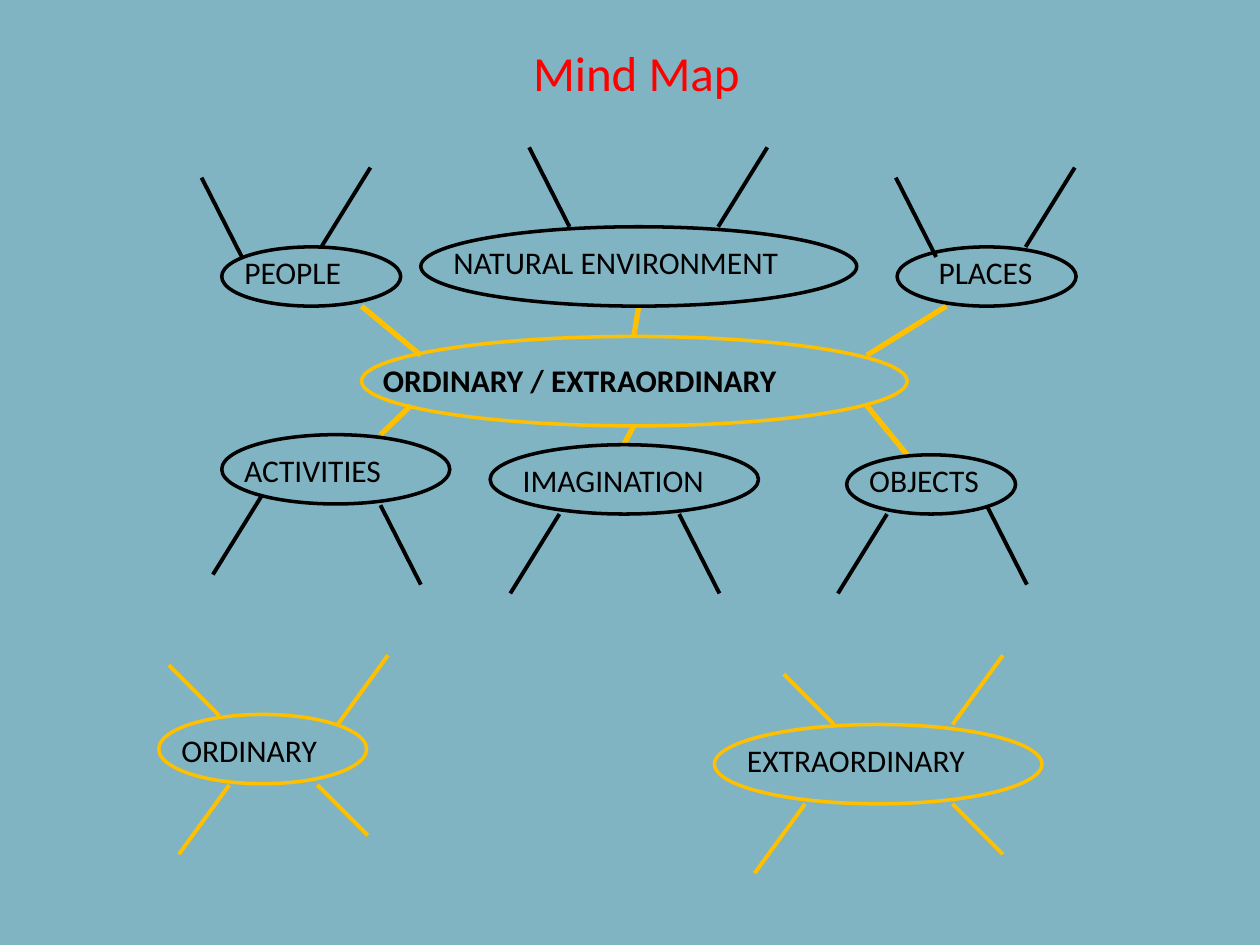
from lxml.etree import SubElement
from pptx import Presentation
from pptx.dml.color import RGBColor
from pptx.enum.shapes import MSO_CONNECTOR as Connector, MSO_SHAPE as Shape
from pptx.enum.text import MSO_ANCHOR as Anchor, MSO_AUTO_SIZE as AutoSize, PP_ALIGN as Align
from pptx.oxml.ns import qn
from pptx.util import Inches, Pt

BLACK, GOLD, RED, TEAL = "000000", "FFC000", "FF0000", "81B4C2"
UP_LEFT, UP_RIGHT = (-0.32, -0.63), (0.39, -0.63)
DOWN_LEFT, DOWN_RIGHT = (-0.39, 0.63), (0.32, 0.63)
GOLD_UP_LEFT, GOLD_UP_RIGHT = (-0.4, -0.4), (0.4, -0.55)
GOLD_DOWN_LEFT, GOLD_DOWN_RIGHT = (-0.4, 0.55), (0.4, 0.4)

# Topic: text, ellipse box, label (x, y, width), spokes (x, y, reach), all inside the box
HUB = ("ORDINARY / EXTRAORDINARY", (2.87, 2.67, 4.33, 0.71), (0.07, 0.15, 3.36), [
    (0.47, 0.15, (-0.47, -0.39)), (2.16, 0, (0.04, -0.24)), (4.01, 0.15, (0.63, -0.39)),
    (4.01, 0.55, (0.32, 0.39)), (2.16, 0.71, (-0.08, 0.15)), (0.39, 0.55, (-0.24, 0.23))])
THEMES = [
    ("PEOPLE", (1.76, 1.96, 1.42, 0.47), (0.08, 0, 0.98),
     [(0.16, 0.08, UP_LEFT), (0.79, 0, UP_RIGHT)]),
    ("NATURAL ENVIRONMENT", (3.34, 1.8, 3.46, 0.63), (0.16, 0.08, 2.8),
     [(1.18, 0, UP_LEFT), (2.36, 0, UP_RIGHT)]),
    ("PLACES", (7.12, 1.96, 1.42, 0.47), (0.23, 0, 0.95),
     [(0.31, 0.08, UP_LEFT), (1.02, 0, UP_RIGHT)]),
    ("ACTIVITIES", (1.76, 3.45, 1.81, 0.55), (0.08, 0.08, 1.3),
     [(0.32, 0.48, DOWN_LEFT), (1.26, 0.56, DOWN_RIGHT)]),
    ("IMAGINATION", (3.89, 3.53, 2.13, 0.55), (0.16, 0.08, 1.65),
     [(0.55, 0.55, DOWN_LEFT), (1.5, 0.55, DOWN_RIGHT)]),
    ("OBJECTS", (6.72, 3.61, 1.34, 0.47), (0.08, 0, 1.08),
     [(0.32, 0.47, DOWN_LEFT), (1.11, 0.4, DOWN_RIGHT)]),
]
CONTRASTS = [
    ("ORDINARY", (1.26, 5.67, 1.65, 0.55), (0.08, 0.08, 1.49),
     [(0.48, 0.01, GOLD_UP_LEFT), (1.42, 0.08, GOLD_UP_RIGHT),
      (0.56, 0.56, GOLD_DOWN_LEFT), (1.26, 0.56, GOLD_DOWN_RIGHT)]),
    ("EXTRAORDINARY", (5.67, 5.75, 2.6, 0.63), (0.16, 0.08, 2.28),
     [(0.95, 0, GOLD_UP_LEFT), (1.89, 0, GOLD_UP_RIGHT),
      (0.72, 0.63, GOLD_DOWN_LEFT), (1.89, 0.63, GOLD_DOWN_RIGHT)]),
]


def paint(color_format, color):
    """Set a fill or line colour from a hex string."""
    color_format.rgb = RGBColor.from_string(color)


def write(frame, text, size=18, color=BLACK, bold=False, align=Align.LEFT, wrap=False):
    """Put one formatted paragraph into a text frame."""
    frame.word_wrap = wrap
    frame.auto_size = AutoSize.SHAPE_TO_FIT_TEXT
    frame.vertical_anchor = Anchor.TOP
    paragraph = frame.paragraphs[0]
    paragraph.alignment = align
    run = paragraph.add_run()
    run.text = text
    run.font.name, run.font.size, run.font.bold = "Calibri", Pt(size), bold
    paint(run.font.color, color)


def add_spoke(slide, x, y, reach, color, weight):
    """Draw a straight line from a point by the given reach."""
    ends = [Inches(value) for value in (x, y, x + reach[0], y + reach[1])]
    spoke = slide.shapes.add_connector(Connector.STRAIGHT, *ends)
    spoke.line.width = Pt(weight)
    paint(spoke.line.color, color)
    SubElement(spoke._element.spPr, qn("a:effectLst"))


def add_topic(slide, topic, color, weight=2.25, bold=False):
    """Draw a labelled ellipse with its spokes."""
    text, box, (label_x, label_y, label_width), spokes = topic
    left, top = box[:2]
    label = slide.shapes.add_textbox(Inches(left + label_x), Inches(top + label_y),
                                     Inches(label_width), Inches(0.4))
    write(label.text_frame, text, bold=bold)
    ellipse = slide.shapes.add_shape(Shape.OVAL, *map(Inches, box))
    ellipse.shadow.inherit = False
    ellipse.fill.background()
    ellipse.line.width = Pt(2)
    paint(ellipse.line.color, color)
    for x, y, reach in spokes:
        add_spoke(slide, left + x, top + y, reach, color, weight)


def add_title(slide, text, box):
    """Place the slide title in the given box."""
    title = slide.shapes.title
    title.left, title.top, title.width, title.height = map(Inches, box)
    write(title.text_frame, text, size=28, color=RED, align=Align.CENTER, wrap=True)


def main():
    """Build the mind map slide."""
    deck = Presentation()
    deck.slide_width, deck.slide_height = Inches(10), Inches(7.5)
    slide = deck.slides.add_slide(deck.slide_layouts[5])
    slide.background.fill.solid()
    paint(slide.background.fill.fore_color, TEAL)
    add_title(slide, "Mind Map", (1.82, 0.29, 6.46, 0.57))
    add_topic(slide, HUB, GOLD, weight=3, bold=True)
    for theme in THEMES:
        add_topic(slide, theme, BLACK)
    for contrast in CONTRASTS:
        add_topic(slide, contrast, GOLD)
    deck.save("out.pptx")


if __name__ == "__main__":
    main()
